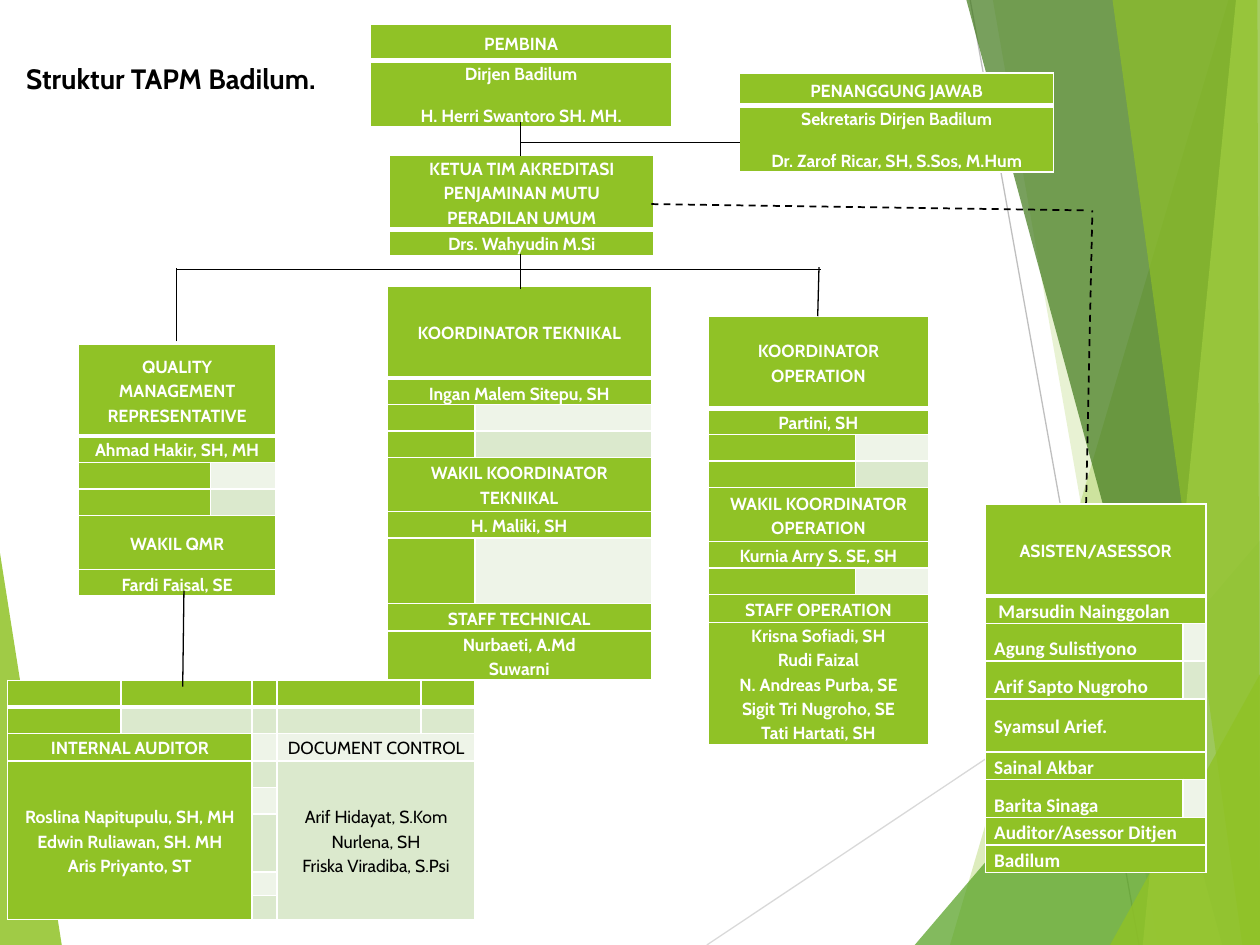
from dataclasses import dataclass
from typing import NamedTuple

from lxml import etree
from pptx import Presentation
from pptx.dml.color import RGBColor
from pptx.enum import dml, shapes, text
from pptx.oxml.ns import qn
from pptx.util import Pt

PX = 9144  # 100 px to the inch
GREEN, WHITE, BLACK = "90C226", "FFFFFF", "000000"
BANDS = ("EEF4E8", "DBE9CD")  # even rows, odd rows
CENTER, LEFT = text.PP_ALIGN.CENTER, text.PP_ALIGN.LEFT
TOP, MIDDLE, BOTTOM = (text.MSO_ANCHOR.TOP, text.MSO_ANCHOR.MIDDLE,
                       text.MSO_ANCHOR.BOTTOM)


class Style(NamedTuple):
    font: str = "Cabin"
    size: int = 10
    align: text.PP_ALIGN = CENTER
    space_after: int = 0


class Entry(NamedTuple):
    row: int
    text: str
    anchor: text.MSO_ANCHOR = MIDDLE
    cols: int = 2
    col: int = 0
    rows: int = 1


class Line(NamedTuple):
    x1: int
    y1: int
    x2: int
    y2: int
    color: str = BLACK
    width: float = 0.75
    dashed: bool = False


class Facet(NamedTuple):
    points: tuple
    color: str
    opacity: int


@dataclass
class Unit:
    x: int
    y: int
    cols: list
    rows: list
    entries: list
    head: Style = Style()
    body: Style = Style()


SPACED = Style(space_after=10)
ASSESSOR = Style("Calibri", 11, LEFT)

LEFT_FACET = Facet(((0, 439), (49, 750), (0, 750)), GREEN, 85)
RIGHT_FACETS = [
    Facet(((975, 0), (754, 750), (1000, 750), (1000, 0)), GREEN, 30),
    Facet(((788, 0), (919, 750), (1000, 750), (1000, 0)), GREEN, 20),
    Facet(((726, 750), (1000, 429), (1000, 750)), "54A021", 72),
    Facet(((767, 0), (970, 750), (1000, 750), (1000, 0)), "3F7819", 70),
    Facet(((981, 0), (907, 750), (1000, 750), (1000, 0)), "C0E474", 70),
    Facet(((883, 0), (986, 750), (1000, 750), (998, 0)), GREEN, 65),
    Facet(((881, 750), (1000, 535), (1000, 750)), GREEN, 80),
]
BACK_LINES = [Line(561, 750, 1000, 457, "D9D9D9"), Line(770, 0, 904, 750, "BFBFBF")]

UNITS = [
    Unit(294, 19, [239], [29, 52], [
        Entry(0, "PEMBINA", cols=1),
        Entry(1, "Dirjen Badilum\nH. Herri Swantoro SH. MH.", TOP, 1)], SPACED, SPACED),
    Unit(587, 58, [249], [26, 52], [
        Entry(0, "PENANGGUNG JAWAB", cols=1),
        Entry(1, "Sekretaris Dirjen Badilum\nDr. Zarof Ricar, SH, S.Sos, M.Hum", TOP, 1)],
        SPACED, SPACED),
    Unit(309, 123, [210], [59, 21], [
        Entry(0, "KETUA TIM AKREDITASI PENJAMINAN MUTU PERADILAN UMUM", cols=1),
        Entry(1, "Drs. Wahyudin M.Si", cols=1)]),
    Unit(62, 273, [105, 52], [73, 21, 21, 21, 43, 21], [
        Entry(0, "QUALITY MANAGEMENT REPRESENTATIVE"),
        Entry(1, "Ahmad Hakir, SH, MH"),
        Entry(4, "WAKIL QMR"),
        Entry(5, "Fardi Faisal, SE", BOTTOM)]),
    Unit(307, 227, [70, 140], [73, 21, 21, 21, 43, 21, 52, 22, 39], [
        Entry(0, "KOORDINATOR TEKNIKAL"),
        Entry(1, "Ingan Malem Sitepu, SH", BOTTOM),
        Entry(4, "WAKIL KOORDINATOR TEKNIKAL"),
        Entry(5, "H. Maliki, SH"),
        Entry(7, "STAFF TECHNICAL"),
        Entry(8, "Nurbaeti, A.Md\vSuwarni")]),
    Unit(562, 251, [117, 58], [73, 21, 21, 21, 43, 21, 21, 22, 95], [
        Entry(0, "KOORDINATOR OPERATION"),
        Entry(1, "Partini, SH"),
        Entry(4, "WAKIL KOORDINATOR OPERATION"),
        Entry(5, "Kurnia Arry S. SE, SH"),
        Entry(7, "STAFF OPERATION"),
        Entry(8, "Krisna Sofiadi, SH\vRudi Faizal\vN. Andreas Purba, SE\v"
                 "Sigit Tri Nugroho, SE\vTati Hartati, SH")]),
    Unit(6, 540, [90, 104, 20, 114, 43], [21, 21, 22, 21, 21, 46, 19, 19], [
        Entry(2, "INTERNAL AUDITOR"),
        Entry(2, "DOCUMENT CONTROL", col=3),
        Entry(3, "Roslina Napitupulu, SH, MH\vEdwin Ruliawan, SH. MH\vAris Priyanto, ST",
              rows=5),
        Entry(3, "Arif Hidayat, S.Kom\vNurlena, SH\vFriska Viradiba, S.Psi",
              col=3, rows=5)]),
    Unit(782, 400, [157, 18], [73, 21, 30, 30, 42, 22, 30, 22, 21], [
        Entry(0, "ASISTEN/ASESSOR"),
        Entry(1, " Marsudin Nainggolan"),
        Entry(2, "Agung Sulistiyono", BOTTOM, 1),
        Entry(3, "Arif Sapto Nugroho", BOTTOM, 1),
        Entry(4, "Syamsul Arief."),
        Entry(5, "Sainal Akbar"),
        Entry(6, "Barita Sinaga", BOTTOM, 1),
        Entry(7, "Auditor/Asessor Ditjen"),
        Entry(8, "Badilum")], body=ASSESSOR),
]

LINKS = [
    Line(140, 271, 140, 213), Line(140, 214, 652, 214), Line(650, 212, 649, 251),
    Line(145, 545, 146, 469), Line(413, 202, 413, 229),
    Line(413, 113, 587, 113), Line(413, 97, 413, 124),
    Line(517, 162, 862, 167, width=1, dashed=True),
    Line(862, 400, 867, 167, width=1, dashed=True),
]


def rgb(color: str) -> RGBColor:
    return RGBColor.from_string(color)


def draw_facet(slide, facet: Facet) -> None:
    start, *rest = facet.points
    builder = slide.shapes.build_freeform(*start, scale=PX)
    builder.add_line_segments(rest, close=True)
    sp = builder.convert_to_shape()
    sp.shadow.inherit = False
    sp.line.fill.background()
    sp.fill.solid()
    sp.fill.fore_color.rgb = rgb(facet.color)
    color = sp._element.spPr.find(".//" + qn("a:srgbClr"))
    etree.SubElement(color, qn("a:alpha"), val=str(facet.opacity * 1000))


def draw_line(slide, line: Line) -> None:
    ends = [v * PX for v in (line.x1, line.y1, line.x2, line.y2)]
    cx = slide.shapes.add_connector(shapes.MSO_CONNECTOR.STRAIGHT, *ends)
    cx.line.color.rgb = rgb(line.color)
    cx.line.width = Pt(line.width)
    if line.dashed:
        cx.line.dash_style = dml.MSO_LINE.DASH
    etree.SubElement(cx._element.spPr, qn("a:effectLst"))


def set_borders(cell, bottom: int) -> None:
    tc_pr = cell._tc.get_or_add_tcPr()
    for side, width in (("L", 1), ("R", 1), ("T", 1), ("B", bottom)):
        ln = etree.SubElement(tc_pr, qn("a:ln" + side), w=str(Pt(width)))
        fill = etree.SubElement(ln, qn("a:solidFill"))
        etree.SubElement(fill, qn("a:srgbClr"), val=WHITE)


def write_entry(cell, entry: Entry, style: Style, on_green: bool) -> None:
    cell.vertical_anchor = entry.anchor
    cell.text_frame.text = entry.text
    for p in cell.text_frame.paragraphs:
        p.alignment = style.align
        p.line_spacing = 1.15
        p.space_after = Pt(style.space_after)
        for r in p.runs:
            r.font.name, r.font.size, r.font.bold = style.font, Pt(style.size), on_green
            r.font.color.rgb = rgb(WHITE if on_green else BLACK)


def draw_unit(slide, unit: Unit) -> None:
    frame = slide.shapes.add_table(
        len(unit.rows), len(unit.cols), unit.x * PX, unit.y * PX,
        sum(unit.cols) * PX, sum(unit.rows) * PX)
    table = frame.table
    table.first_row = table.horz_banding = False
    for column, width in zip(table.columns, unit.cols):
        column.width = width * PX
    for i, height in enumerate(unit.rows):
        table.rows[i].height = height * PX
        for j in range(len(unit.cols)):
            cell = table.cell(i, j)
            set_borders(cell, 3 if i == 0 else 1)
            cell.margin_left = cell.margin_right = 7 * PX
            cell.margin_top = cell.margin_bottom = 0
            cell.fill.solid()
            cell.fill.fore_color.rgb = rgb(GREEN if 0 in (i, j) else BANDS[i % 2])
            # Small type keeps empty cells from stretching their row
            end = cell.text_frame.paragraphs[0]._p
            etree.SubElement(end, qn("a:endParaRPr"), sz="600")
    for entry in unit.entries:
        cell = table.cell(entry.row, entry.col)
        if entry.rows * entry.cols > 1:
            cell.merge(table.cell(entry.row + entry.rows - 1, entry.col + entry.cols - 1))
        style = unit.body if entry.row else unit.head
        write_entry(cell, entry, style, 0 in (entry.row, entry.col))


def draw_title(slide) -> None:
    box = slide.shapes.add_textbox(11 * PX, 44 * PX, 269 * PX, 37 * PX)
    tf = box.text_frame
    tf.word_wrap = False
    tf.text = "Struktur TAPM Badilum."
    font = tf.paragraphs[0].runs[0].font
    font.name, font.size, font.bold = "Cabin", Pt(16), True
    font.color.rgb = rgb(BLACK)


def main() -> None:
    prs = Presentation()
    prs.slide_width, prs.slide_height = 1000 * PX, 750 * PX
    slide = prs.slides.add_slide(prs.slide_layouts[6])
    # Background
    draw_facet(slide, LEFT_FACET)
    for line in BACK_LINES:
        draw_line(slide, line)
    for facet in RIGHT_FACETS:
        draw_facet(slide, facet)
    # Organisation chart; the assessors' table covers the links' ends
    *units, assessors = UNITS
    for unit in units:
        draw_unit(slide, unit)
    for line in LINKS:
        draw_line(slide, line)
    draw_unit(slide, assessors)
    draw_title(slide)
    prs.save("out.pptx")


if __name__ == "__main__":
    main()
